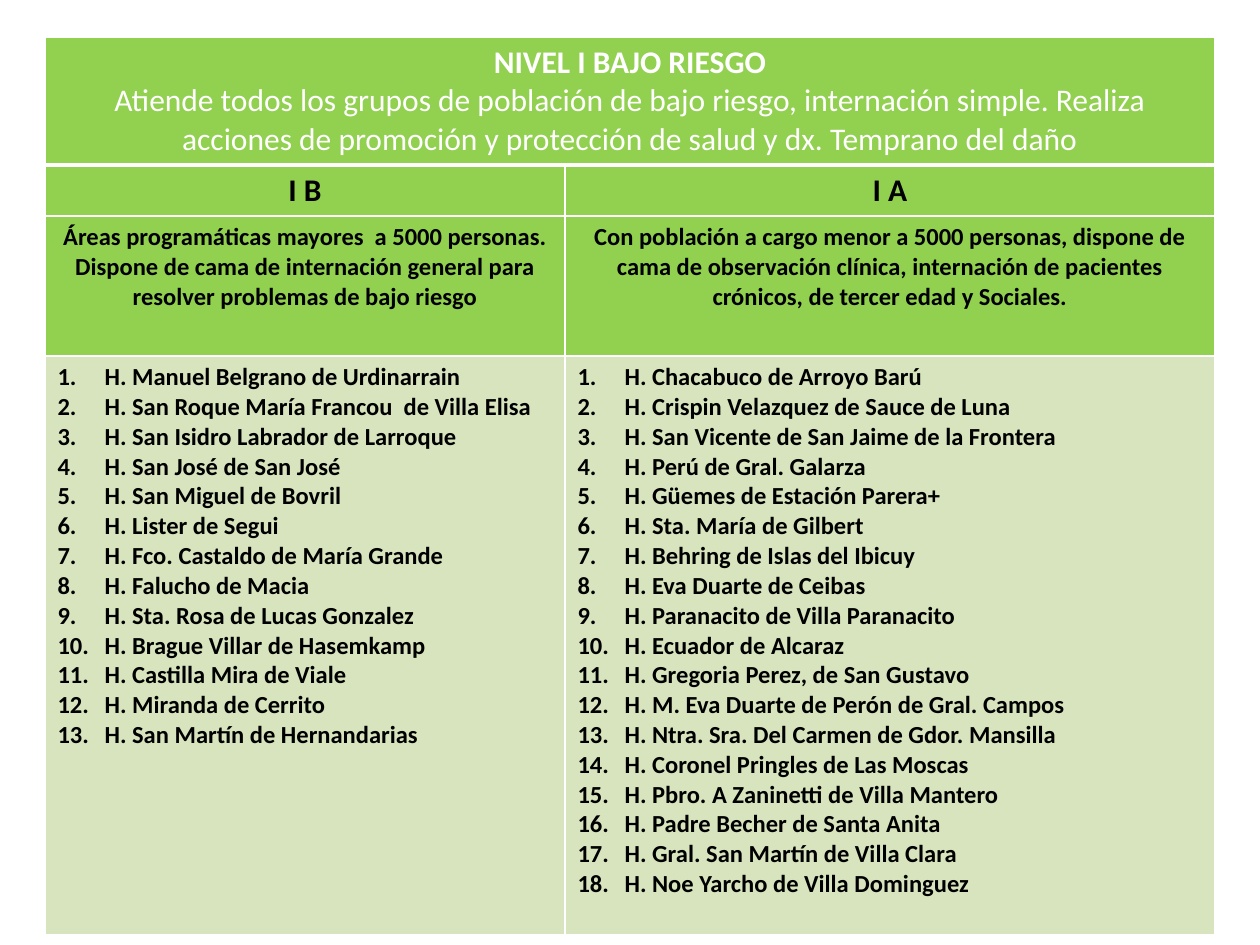
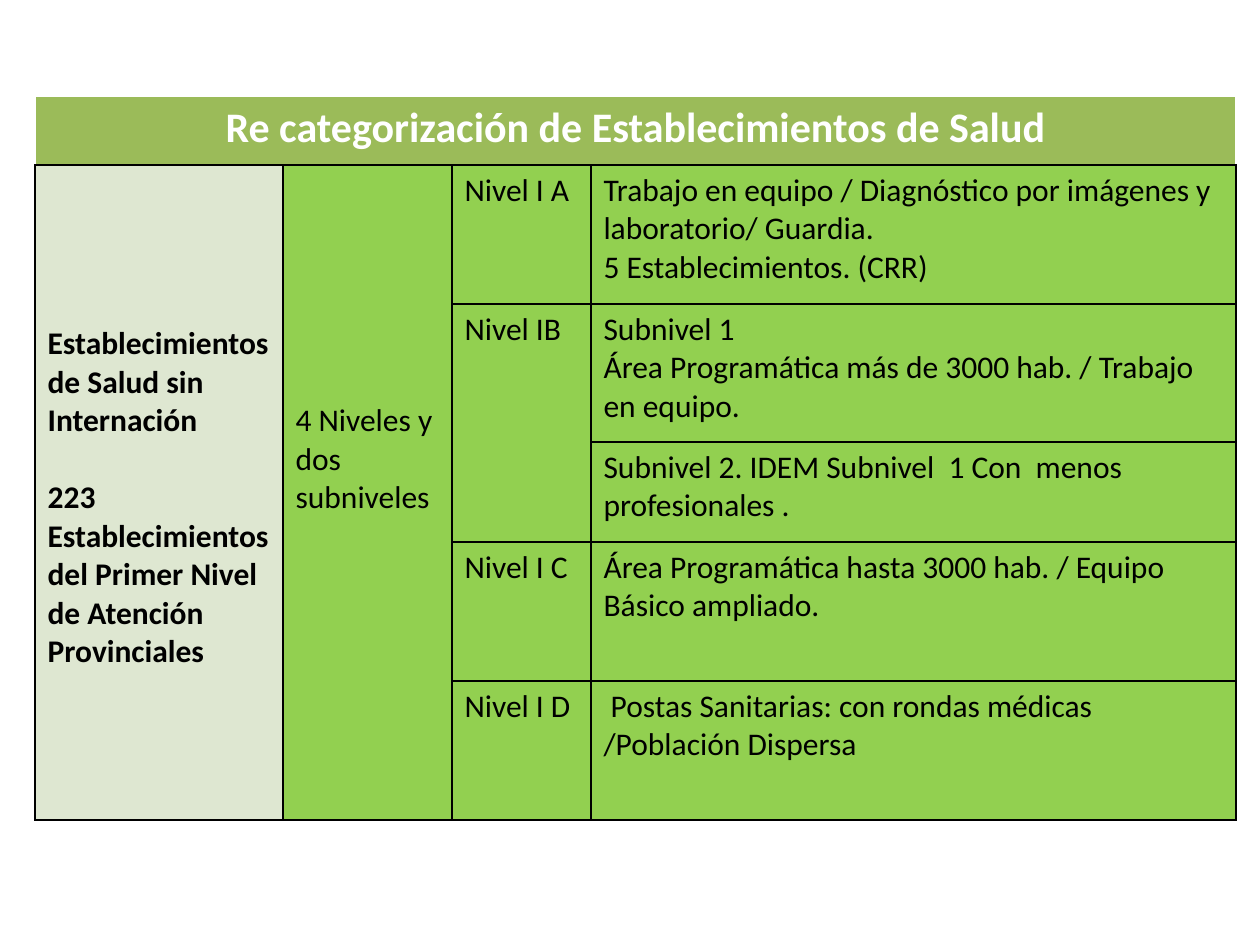
"""Builds two slides with the categories of public health establishments."""
from lxml import etree
from pptx import Presentation
from pptx.dml.color import RGBColor
from pptx.enum.text import PP_ALIGN
from pptx.oxml.ns import qn
from pptx.util import Pt

PX = 914400 / 126
FONT = "Calibri"
LEFT, CENTER = PP_ALIGN.LEFT, PP_ALIGN.CENTER
COLORS = {
    "white": "FFFFFF",
    "black": "000000",
    "green": "92D050",
    "olive": "9BBB59",
    "pale green": "D7E4BD",
    "pale gray": "DEE7D1",
}
SIDES = ("lnL", "lnR", "lnT", "lnB")

HOSPITALS_IB = [
    "H. Manuel Belgrano de Urdinarrain",
    "H. San Roque María Francou  de Villa Elisa",
    "H. San Isidro Labrador de Larroque",
    "H. San José de San José",
    "H. San Miguel de Bovril",
    "H. Lister de Segui",
    "H. Fco. Castaldo de María Grande",
    "H. Falucho de Macia",
    "H. Sta. Rosa de Lucas Gonzalez",
    "H. Brague Villar de Hasemkamp",
    "H. Castilla Mira de Viale",
    "H. Miranda de Cerrito",
    "H. San Martín de Hernandarias",
]
HOSPITALS_IA = [
    "H. Chacabuco de Arroyo Barú",
    "H. Crispin Velazquez de Sauce de Luna",
    "H. San Vicente de San Jaime de la Frontera",
    "H. Perú de Gral. Galarza",
    "H. Güemes de Estación Parera+",
    "H. Sta. María de Gilbert",
    "H. Behring de Islas del Ibicuy",
    "H. Eva Duarte de Ceibas",
    "H. Paranacito de Villa Paranacito",
    "H. Ecuador de Alcaraz",
    "H. Gregoria Perez, de San Gustavo",
    "H. M. Eva Duarte de Perón de Gral. Campos",
    "H. Ntra. Sra. Del Carmen de Gdor. Mansilla",
    "H. Coronel Pringles de Las Moscas",
    "H. Pbro. A Zaninetti de Villa Mantero",
    "H. Padre Becher de Santa Anita",
    "H. Gral. San Martín de Villa Clara",
    "H. Noe Yarcho de Villa Dominguez",
]
RISK_LEVELS = [
    ("I B", "Áreas programáticas mayores  a 5000 personas. Dispone de cama de internación "
            "general para resolver problemas de bajo riesgo", HOSPITALS_IB),
    ("I A", "Con población a cargo menor a 5000 personas, dispone de cama de observación "
            "clínica, internación de pacientes crónicos, de tercer edad y Sociales.", HOSPITALS_IA),
]
CARE_LEVELS = [
    ("Nivel I A", ["Trabajo en equipo / Diagnóstico por imágenes y laboratorio/ Guardia.",
                   "5 Establecimientos. (CRR)"]),
    ("Nivel IB", ["Subnivel 1", "Área Programática más de 3000 hab. / Trabajo en equipo."]),
    (None, ["Subnivel 2. IDEM Subnivel  1 Con  menos profesionales ."]),
    ("Nivel I C", ["Área Programática hasta 3000 hab. / Equipo Básico ampliado."]),
    ("Nivel I D", [" Postas Sanitarias: con rondas médicas /Población Dispersa"]),
]


def px(length):
    return round(length * PX)


class TableDeck:
    """Holds the deck, its current page and the shared table style."""

    def __init__(self):
        self.deck = Presentation()
        self.deck.slide_width, self.deck.slide_height = px(1260), px(945)
        self.page = None

    def new_page(self):
        self.page = self.deck.slides.add_slide(self.deck.slide_layouts[6])

    def table(self, left, top, widths, heights, line):
        frame = self.page.shapes.add_table(len(heights), len(widths), px(left), px(top),
                                           px(sum(widths)), px(sum(heights)))
        table = frame.table
        table.first_row = table.horz_banding = False
        for column, width in zip(table.columns, widths):
            column.width = px(width)
        for row, height in zip(table.rows, heights):
            row.height = px(height)
        for cell in table.iter_cells():
            self.borders(cell, {side: (line, 1) for side in SIDES})
            self.fill(cell, "green")
        return table

    def borders(self, cell, lines):
        properties = cell._tc.get_or_add_tcPr()
        for side, (color, width) in lines.items():
            edge = properties.find(qn(f"a:{side}"))
            if edge is None:
                edge = etree.Element(qn(f"a:{side}"))
                properties.insert(SIDES.index(side), edge)
            for child in list(edge):
                edge.remove(child)
            edge.set("w", str(Pt(width)))
            solid = etree.SubElement(edge, qn("a:solidFill"))
            etree.SubElement(solid, qn("a:srgbClr"), val=COLORS[color])

    def fill(self, cell, color):
        cell.fill.solid()
        cell.fill.fore_color.rgb = RGBColor.from_string(COLORS[color])

    def text(self, cell, lines, size=18, color="black", bold=False, align=LEFT):
        cell.text_frame.text = "\n".join(lines)
        for para in cell.text_frame.paragraphs:
            para.alignment = align
            for span in para.runs:
                span.font.name, span.font.size, span.font.bold = FONT, Pt(size), bold
                span.font.color.rgb = RGBColor.from_string(COLORS[color])

    def numbers(self, cell, indent=47):
        for para in cell.text_frame.paragraphs:
            properties = para._p.get_or_add_pPr()
            properties.set("marL", str(px(indent)))
            properties.set("indent", str(-px(indent)))
            etree.SubElement(properties, qn("a:buFont"), typeface="+mj-lt")
            etree.SubElement(properties, qn("a:buAutoNum"), type="arabicPeriod")


def build_low_risk(style):
    style.new_page()
    table = style.table(45, 37, [520, 650], [128, 50, 140, 579], "white")
    header = table.cell(0, 0)
    header.merge(table.cell(0, 1))
    style.text(header, ["NIVEL I BAJO RIESGO",
                        "Atiende todos los grupos de población de bajo riesgo, internación simple. "
                        "Realiza acciones de promoción y protección de salud y dx. Temprano del daño"],
               color="white", align=CENTER)
    header.text_frame.paragraphs[0].runs[0].font.bold = True
    for column, (level, description, hospitals) in enumerate(RISK_LEVELS):
        style.borders(table.cell(0, column), {"lnB": ("white", 3)})
        style.borders(table.cell(1, column), {"lnT": ("white", 3)})
        style.text(table.cell(1, column), [level], bold=True, align=CENTER)
        style.text(table.cell(2, column), [description], size=14, bold=True, align=CENTER)
        listing = table.cell(3, column)
        style.fill(listing, "pale green")
        style.text(listing, hospitals, size=14, bold=True)
        style.numbers(listing)


def build_recategorization(style):
    style.new_page()
    table = style.table(35, 96, [248, 169, 139, 645], [69, 139, 138, 100, 139, 139], "black")
    for column in range(4):
        header = table.cell(0, column)
        style.borders(header, {side: ("white", 1) for side in SIDES[:3]})
        style.fill(header, "olive")
    table.cell(0, 0).merge(table.cell(0, 3))
    style.text(table.cell(0, 0), ["Re categorización de Establecimientos de Salud"],
               size=24, color="white", bold=True, align=CENTER)

    scope, count = table.cell(1, 0), table.cell(1, 1)
    for row in range(1, 6):
        style.fill(table.cell(row, 0), "pale gray")
    scope.merge(table.cell(5, 0))
    count.merge(table.cell(5, 1))
    table.cell(2, 2).merge(table.cell(3, 2))
    style.text(scope, ["Establecimientos de Salud sin Internación",
                       "223 Establecimientos del Primer Nivel de Atención", "Provinciales"], bold=True)
    scope.text_frame.paragraphs[1].space_before = Pt(22)
    style.text(count, ["4 Niveles y dos subniveles"])
    scope.margin_top, count.margin_top = px(160), px(237)

    for row, (level, description) in enumerate(CARE_LEVELS, start=1):
        if level:
            style.text(table.cell(row, 2), [level])
        style.text(table.cell(row, 3), description)


def main():
    style = TableDeck()
    build_low_risk(style)
    build_recategorization(style)
    style.deck.save("out.pptx")


if __name__ == "__main__":
    main()
